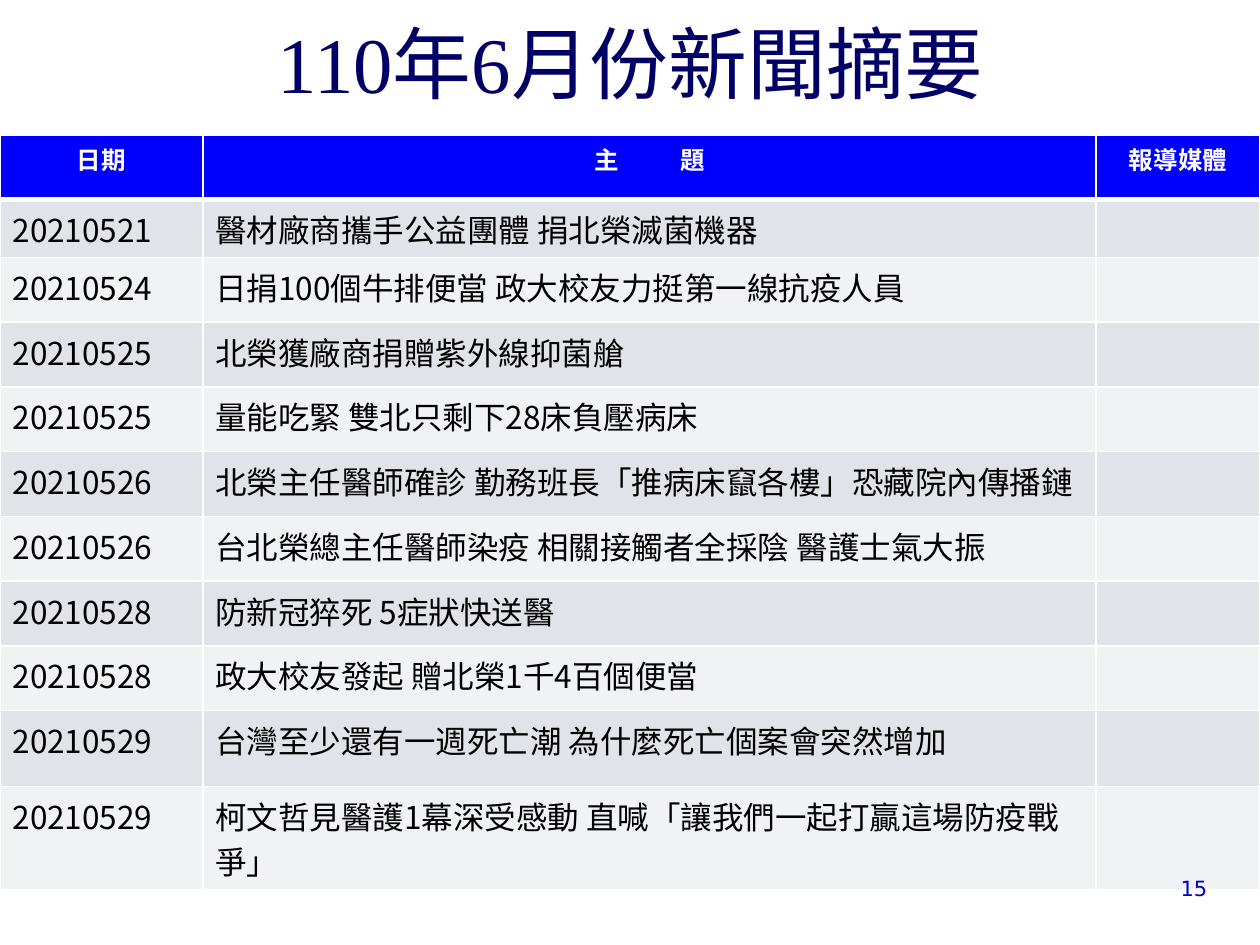
from lxml import etree
from pptx import Presentation
from pptx.dml.color import RGBColor
from pptx.enum.text import MSO_ANCHOR, PP_ALIGN
from pptx.oxml.ns import qn
from pptx.util import Inches, Pt

LEFT, CENTER, RIGHT = PP_ALIGN.LEFT, PP_ALIGN.CENTER, PP_ALIGN.RIGHT
TOP, BOTTOM = MSO_ANCHOR.TOP, MSO_ANCHOR.BOTTOM

WHITE = RGBColor(0xFF, 0xFF, 0xFF)
BLACK = RGBColor(0x00, 0x00, 0x00)
NAVY = RGBColor(0x00, 0x00, 0x66)
BLUE = RGBColor(0x00, 0x00, 0xFF)
PAGE_BLUE = RGBColor(0x00, 0x00, 0xCC)
DARK_BAND = RGBColor(0xE0, 0xE4, 0xE9)
LIGHT_BAND = RGBColor(0xF0, 0xF2, 0xF4)

CJK_FONT = "Noto Sans CJK SC"
TITLE_FONT = "Times New Roman"
PAGE_FONT = "DejaVu Sans"

GRID_COLUMNS, GRID_ROWS = 100, 75
COLUMN_SPANS = [16.1, 70.9, 13]
ROW_SPANS = [5.14, 4.6] + [5.14] * 7 + [6, 8.2]

HEADINGS = ["日期", "主 題", "報導媒體"]
NEWS = [
    ("20210521", "醫材廠商攜手公益團體 捐北榮滅菌機器"),
    ("20210524", "日捐100個牛排便當 政大校友力挺第一線抗疫人員"),
    ("20210525", "北榮獲廠商捐贈紫外線抑菌艙"),
    ("20210525", "量能吃緊 雙北只剩下28床負壓病床"),
    ("20210526", "北榮主任醫師確診 勤務班長「推病床竄各樓」恐藏院內傳播鏈"),
    ("20210526", "台北榮總主任醫師染疫 相關接觸者全採陰 醫護士氣大振"),
    ("20210528", "防新冠猝死 5症狀快送醫"),
    ("20210528", "政大校友發起 贈北榮1千4百個便當"),
    ("20210529", "台灣至少還有一週死亡潮 為什麼死亡個案會突然增加"),
    ("20210529", "柯文哲見醫護1幕深受感動 直喊「讓我們一起打贏這場防疫戰爭」"),
]


def write_text(frame, text, size=18, font=CJK_FONT, color=BLACK, bold=False,
               align=LEFT, space_tracking=0):
    """Write one formatted paragraph, optionally widening its spaces by tracking."""
    paragraph = frame.paragraphs[0]
    paragraph.alignment = align
    paragraph.font.size = Pt(size)
    pieces = text.replace(" ", "\n \n").split("\n") if space_tracking else [text]
    for piece in filter(None, pieces):
        run = paragraph.add_run()
        run.text = piece
        run.font.size, run.font.name, run.font.bold = Pt(size), font, bold
        run.font.color.rgb = color
        properties = run.font._element
        latin = properties.find(qn("a:latin"))
        east_asian = etree.Element(qn("a:ea"), typeface=CJK_FONT)
        latin.addnext(east_asian)
        if piece == " " and space_tracking:
            properties.set("spc", str(space_tracking * 100))


class SlideBuilder:
    """Hold the grid, the table style and the current slide."""

    def __init__(self, presentation):
        self.column = presentation.slide_width / GRID_COLUMNS
        self.row = presentation.slide_height / GRID_ROWS
        self.slide = presentation.slides.add_slide(presentation.slide_layouts[6])

    def place(self, left, top, width, height):
        return (round(left * self.column), round(top * self.row),
                round(width * self.column), round(height * self.row))

    def text(self, text, *area, anchor=TOP, **style):
        frame = self.slide.shapes.add_textbox(*self.place(*area)).text_frame
        frame.word_wrap = True
        frame.vertical_anchor = anchor
        write_text(frame, text, **style)

    def borders(self, cell, **widths):
        properties = cell._tc.get_or_add_tcPr()
        for side in "LRTB":
            width = Pt(widths.get(side, 1))
            line = etree.SubElement(properties, qn(f"a:ln{side}"), w=str(width))
            fill = etree.SubElement(line, qn("a:solidFill"))
            etree.SubElement(fill, qn("a:srgbClr"), val=str(WHITE))

    def cell(self, cell, text, fill, borders, **style):
        self.borders(cell, **borders)
        cell.fill.solid()
        cell.fill.fore_color.rgb = fill
        write_text(cell.text_frame, text, **style)

    def table(self, left, top, headings, records):
        area = self.place(left, top, sum(COLUMN_SPANS), sum(ROW_SPANS))
        table = self.slide.shapes.add_table(
            len(ROW_SPANS), len(COLUMN_SPANS), *area).table
        for column, span in zip(table.columns, COLUMN_SPANS):
            column.width = round(span * self.column)
        for row, span in zip(table.rows, ROW_SPANS):
            row.height = round(span * self.row)
        for index, heading in enumerate(headings):
            self.cell(table.cell(0, index), heading, BLUE, {"B": 3}, size=14,
                      color=WHITE, bold=True, align=CENTER, space_tracking=32)
        for number, record in enumerate(records, start=1):
            fill = DARK_BAND if number % 2 else LIGHT_BAND
            borders = {"T": 3} if number == 1 else {}
            for index, text in enumerate((*record, "")):
                self.cell(table.cell(number, index), text, fill, borders)


def main():
    presentation = Presentation()
    presentation.slide_width, presentation.slide_height = Inches(10), Inches(7.5)
    builder = SlideBuilder(presentation)
    builder.text("110年6月份新聞摘要", 6.3, 3.4, 87.5, 5.8, anchor=BOTTOM,
                 size=45, font=TITLE_FONT, color=NAVY, align=CENTER)
    builder.table(0, 10.7, HEADINGS, NEWS)
    builder.text("15", 89.4, 69, 7.4, 3, size=12, font=PAGE_FONT,
                 color=PAGE_BLUE, align=RIGHT)
    presentation.save("out.pptx")


if __name__ == "__main__":
    main()
